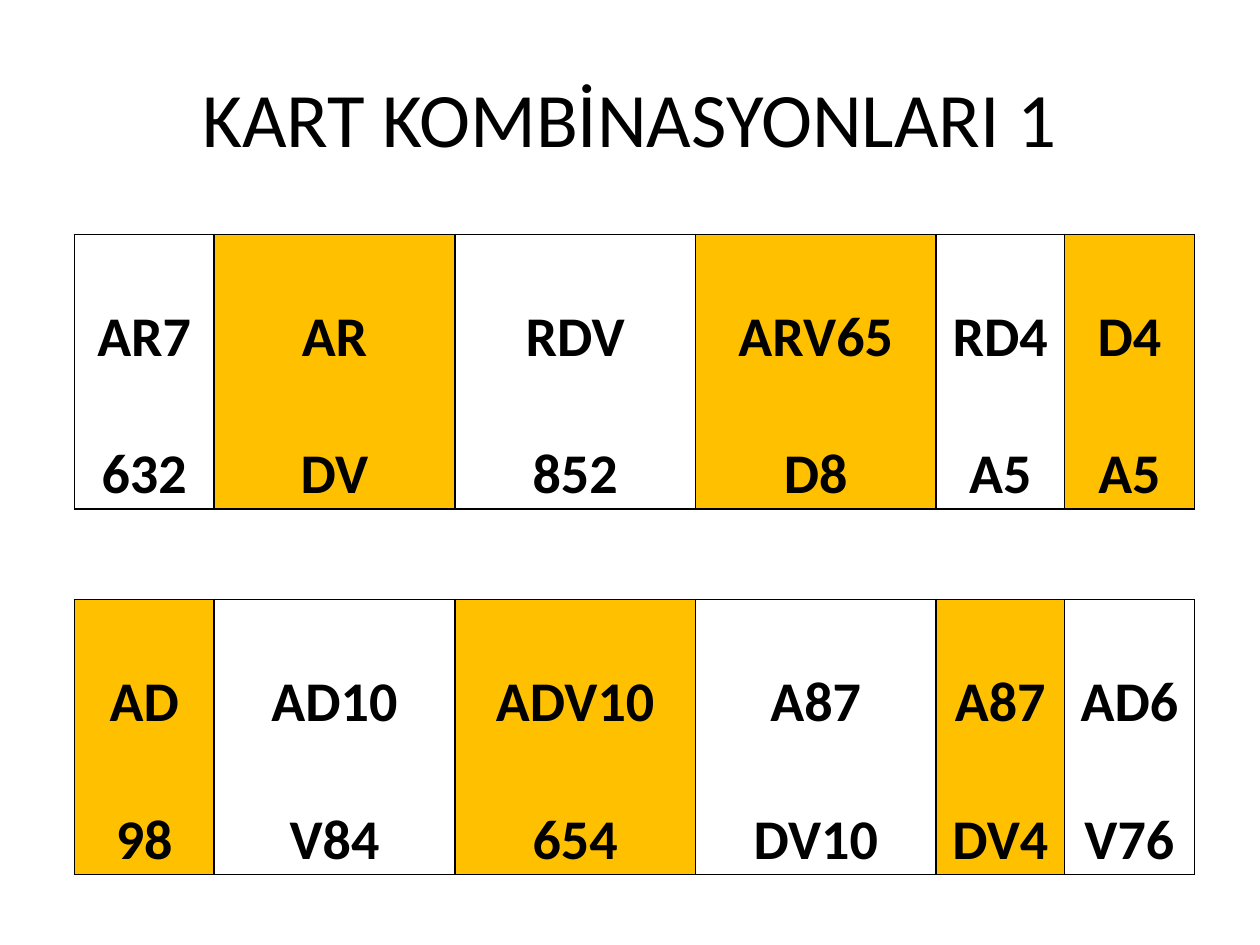
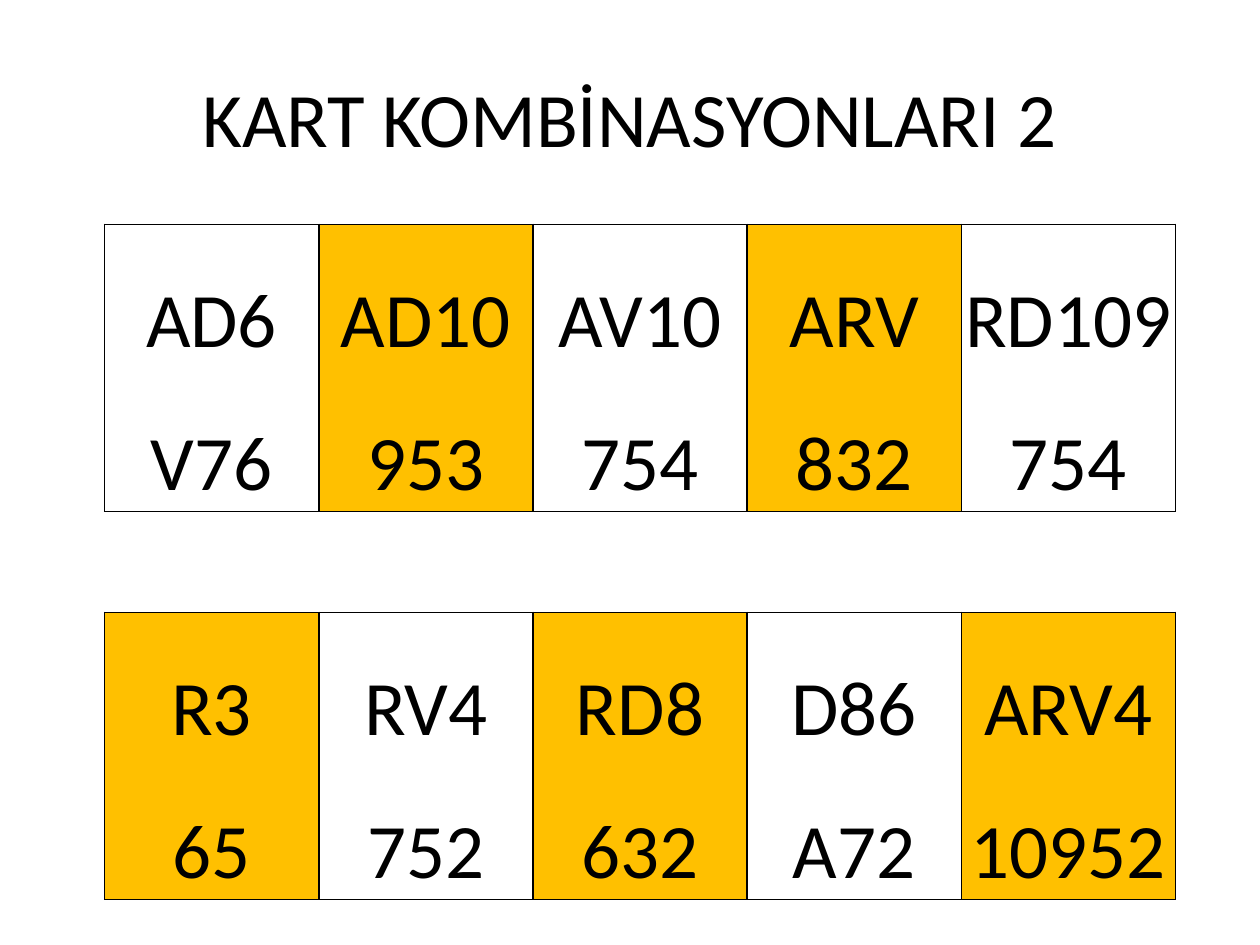
from lxml.etree import SubElement
from pptx import Presentation
from pptx.dml.color import RGBColor
from pptx.enum.text import MSO_ANCHOR, PP_ALIGN
from pptx.oxml.ns import qn
from pptx.util import Inches, Pt

BLACK, AMBER = "000000", "FFC000"
FONT = "Calibri"
BORDER_WIDTH = Pt(1)
TITLE_BOX = (0.5, 0.3, 9, 1.25)
TITLE_FORMAT = {"size": Pt(44), "bold": False}
CELL_FORMAT = {
    "margin_left": Inches(0.01),
    "margin_right": Inches(0.01),
    "margin_top": Inches(0.01),
    "margin_bottom": 0,
    "vertical_anchor": MSO_ANCHOR.BOTTOM,
}

# Each band is a row of card holdings: (upper hand, lower hand)
SLIDES = [
    {
        "title": "KART KOMBİNASYONLARI 1",
        "position": (0.59, 1.86),
        "column_widths": [1.11, 1.91, 1.91, 1.91, 1.02, 1.03],
        "hand_height": 1.09,
        "gap_height": 0.72,
        "font": {"size": Pt(32), "bold": True},
        "bands": [
            [("AR7", "632"), ("AR", "DV"), ("RDV", "852"),
             ("ARV65", "D8"), ("RD4", "A5"), ("D4", "A5")],
            [("AD", "98"), ("AD10", "V84"), ("ADV10", "654"),
             ("A87", "DV10"), ("A87", "DV4"), ("AD6", "V76")],
        ],
    },
    {
        "title": "KART KOMBİNASYONLARI 2",
        "position": (0.83, 1.78),
        "column_widths": [1.7] * 5,
        "hand_height": 1.14,
        "gap_height": 0.8,
        "font": {"size": Pt(44), "bold": False},
        "bands": [
            [("AD6", "V76"), ("AD10", "953"), ("AV10", "754"),
             ("ARV", "832"), ("RD109", "754")],
            [("R3", "65"), ("RV4", "752"), ("RD8", "632"),
             ("D86", "A72"), ("ARV4", "10952")],
        ],
    },
]


def color(hex_value):
    return RGBColor.from_string(hex_value)


def set_attributes(target, values):
    for name, value in values.items():
        setattr(target, name, value)


def write_text(text_frame, text, font_format):
    paragraph = text_frame.paragraphs[0]
    paragraph.alignment = PP_ALIGN.CENTER
    run = paragraph.add_run()
    run.text = text
    set_attributes(run.font, {"name": FONT, **font_format})
    run.font.color.rgb = color(BLACK)


def set_borders(cell, sides):
    """Draw the named sides (L, R, T, B) in black and clear the others."""
    properties = cell._tc.get_or_add_tcPr()
    for index, side in enumerate("LRTB"):
        line = SubElement(properties, qn(f"a:ln{side}"), w=str(BORDER_WIDTH))
        if side in sides:
            fill = SubElement(line, qn("a:solidFill"))
            SubElement(fill, qn("a:srgbClr"), val=BLACK)
        else:
            SubElement(line, qn("a:noFill"))
        properties.insert(index, line)  # borders come before the fill


def add_title(slide, text):
    text_box = slide.shapes.add_textbox(*map(Inches, TITLE_BOX))
    text_frame = text_box.text_frame
    set_attributes(text_frame, {"word_wrap": True, "vertical_anchor": MSO_ANCHOR.MIDDLE})
    write_text(text_frame, text, TITLE_FORMAT)


def add_card_table(slide, content):
    widths = content["column_widths"]
    hand, gap = content["hand_height"], content["gap_height"]
    heights = [hand, hand, gap, hand, hand]
    left, top = content["position"]
    table = slide.shapes.add_table(
        len(heights), len(widths), Inches(left), Inches(top),
        Inches(sum(widths)), Inches(sum(heights))).table
    set_attributes(table, {"first_row": False, "horz_banding": False})
    for column, width in zip(table.columns, widths):
        column.width = Inches(width)
    for row, height in zip(table.rows, heights):
        row.height = Inches(height)

    for column_index in range(len(widths)):
        gap_cell = table.cell(2, column_index)
        gap_cell.fill.background()
        set_borders(gap_cell, "TB")

    for band_index, band in enumerate(content["bands"]):
        for column_index, hands in enumerate(band):
            for hand_index, text in enumerate(hands):
                cell = table.cell(3 * band_index + hand_index, column_index)
                set_attributes(cell, CELL_FORMAT)
                write_text(cell.text_frame, text, content["font"])
                if (band_index + column_index) % 2:
                    cell.fill.solid()
                    cell.fill.fore_color.rgb = color(AMBER)
                else:
                    cell.fill.background()
                set_borders(cell, ("LRT", "LRB")[hand_index])


def main():
    presentation = Presentation()
    presentation.slide_width = Inches(10)
    presentation.slide_height = Inches(7.5)
    for content in SLIDES:
        slide = presentation.slides.add_slide(presentation.slide_layouts[6])
        add_title(slide, content["title"])
        add_card_table(slide, content)
    presentation.save("out.pptx")


if __name__ == "__main__":
    main()
